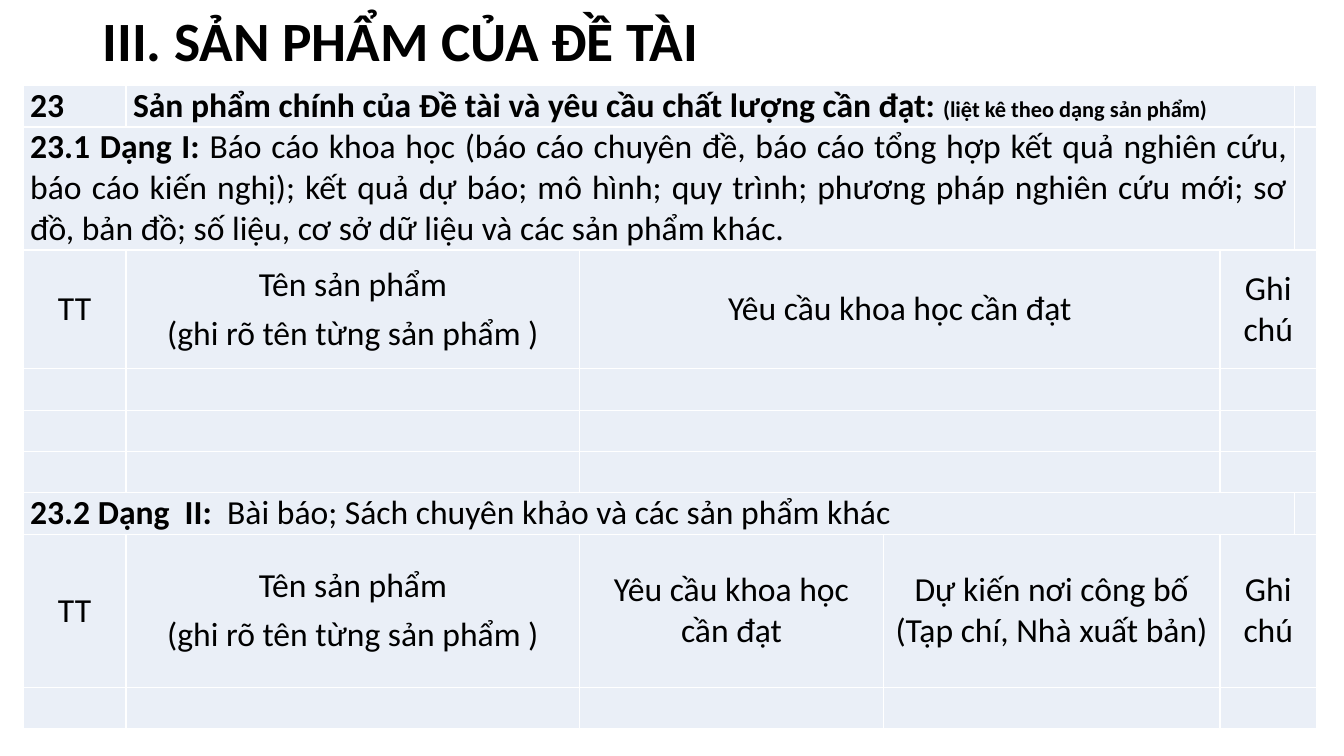
from pptx import Presentation
from pptx.dml.color import RGBColor
from pptx.enum.text import MSO_ANCHOR, PP_ALIGN
from pptx.util import Inches, Pt

LEFT, CENTER, JUSTIFY = PP_ALIGN.LEFT, PP_ALIGN.CENTER, PP_ALIGN.JUSTIFY
TOP, MIDDLE = MSO_ANCHOR.TOP, MSO_ANCHOR.MIDDLE
BLACK = RGBColor(0x00, 0x00, 0x00)
PALE = RGBColor(0xEA, 0xEF, 0xF7)
FONT = "Calibri"
SIZE, SMALL = 24, 16

TITLE = "III. SẢN PHẨM CỦA ĐỀ TÀI"
WIDTHS = [1.02, 4.5, 3.01, 3.34, 0.74, 0.22]

# A run is (text, bold, size); a paragraph is a list of runs.
HEAD = [[("23", True, SIZE)]]
MAIN = [[
    ("Sản phẩm chính của Đề tài và yêu cầu chất lượng cần đạt: ", True, SIZE),
    ("(liệt kê theo dạng sản phẩm)", True, SMALL),
]]
FORM_1 = [[
    ("23.1 Dạng I: ", True, SIZE),
    ("Báo cáo khoa học (báo cáo chuyên đề, báo cáo tổng hợp kết quả nghiên cứu, "
     "báo cáo kiến nghị); kết quả dự báo; mô hình; quy trình; phương pháp nghiên "
     "cứu mới; sơ đồ, bản đồ; số liệu, cơ sở dữ liệu và các sản phẩm khác.",
     False, SIZE),
]]
FORM_2 = [[
    ("23.2 Dạng  II:  ", True, SIZE),
    ("Bài báo; Sách chuyên khảo và các sản phẩm khác", False, SIZE),
]]
ORDER = [[("TT", False, SIZE)]]
NAME = [[("Tên sản phẩm", False, SIZE)],
        [("(ghi rõ tên từng sản phẩm )", False, SIZE)]]
NEED = [[("Yêu cầu khoa học cần đạt", False, SIZE)]]
PLACE = [[("Dự kiến nơi công bố (Tạp chí, Nhà xuất bản)", False, SIZE)]]
NOTE = [[("Ghi chú", False, SIZE)]]

# A cell is (paragraphs, columns spanned).
BLANK = [([], 1), ([], 1), ([], 2), ([], 2)]
ROWS = [  # height, alignment, anchor, cells
    (0.41, LEFT, TOP, [(HEAD, 1), (MAIN, 4), ([], 1)]),
    (1.22, JUSTIFY, TOP, [(FORM_1, 5), ([], 1)]),
    (1.18, CENTER, MIDDLE, [(ORDER, 1), (NAME, 1), (NEED, 2), (NOTE, 2)]),
    (0.41, LEFT, TOP, BLANK),
    (0.41, LEFT, TOP, BLANK),
    (0.41, LEFT, TOP, BLANK),
    (0.41, LEFT, TOP, [(FORM_2, 5), ([], 1)]),
    (1.52, CENTER, MIDDLE,
     [(ORDER, 1), (NAME, 1), (NEED, 1), (PLACE, 1), (NOTE, 2)]),
    (0.41, LEFT, TOP, [([], 1), ([], 1), ([], 1), ([], 1), ([], 2)]),
]


def style(para, size):
    para.font.name = FONT
    para.font.size = Pt(size)
    para.font.color.rgb = BLACK


def add_title(slide):
    box = slide.shapes.add_textbox(
        Inches(0.92), Inches(0.09), Inches(11.5), Inches(0.69))
    frame = box.text_frame
    frame.word_wrap = True
    frame.vertical_anchor = MIDDLE
    para = frame.paragraphs[0]
    para.text = TITLE
    para.line_spacing = 0.9
    style(para, 39.6)
    para.font.bold = True


def fill_cell(cell, paras, align, anchor):
    cell.fill.solid()
    cell.fill.fore_color.rgb = PALE
    cell.margin_left = cell.margin_right = Inches(0.07)
    cell.margin_top = cell.margin_bottom = 0
    cell.vertical_anchor = anchor
    frame = cell.text_frame
    for i, runs in enumerate(paras):
        para = frame.add_paragraph() if i else frame.paragraphs[0]
        para.alignment = align
        para.space_before = para.space_after = Pt(3)
        style(para, SIZE)
        for text, bold, size in runs:
            run = para.add_run()
            run.text = text
            run.font.bold = bold
            if size != SIZE:
                run.font.size = Pt(size)


def add_grid(slide):
    high = sum(row[0] for row in ROWS)
    table = slide.shapes.add_table(
        len(ROWS), len(WIDTHS), Inches(0.23), Inches(0.85),
        Inches(sum(WIDTHS)), Inches(high)).table
    table.first_row = table.horz_banding = False
    for col, width in zip(table.columns, WIDTHS):
        col.width = Inches(width)
    for r, (height, align, anchor, cells) in enumerate(ROWS):
        table.rows[r].height = Inches(height)
        c = 0
        for paras, span in cells:
            cell = table.cell(r, c)
            if span > 1:
                cell.merge(table.cell(r, c + span - 1))
            fill_cell(cell, paras, align, anchor)
            c += span


def main():
    deck = Presentation()
    deck.slide_width, deck.slide_height = Inches(13.33), Inches(7.5)
    slide = deck.slides.add_slide(deck.slide_layouts[6])
    add_title(slide)
    add_grid(slide)
    deck.save("out.pptx")


if __name__ == "__main__":
    main()
